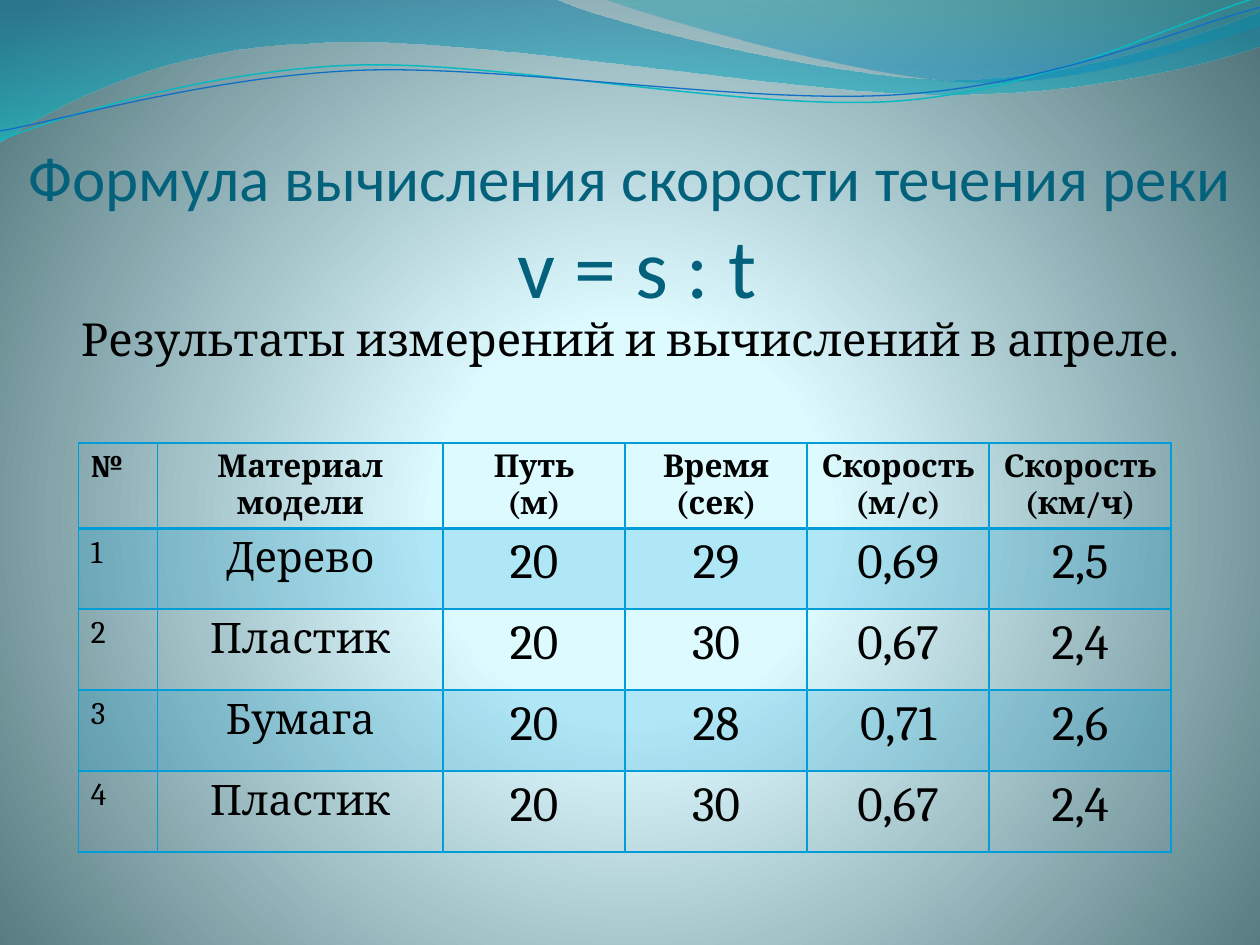
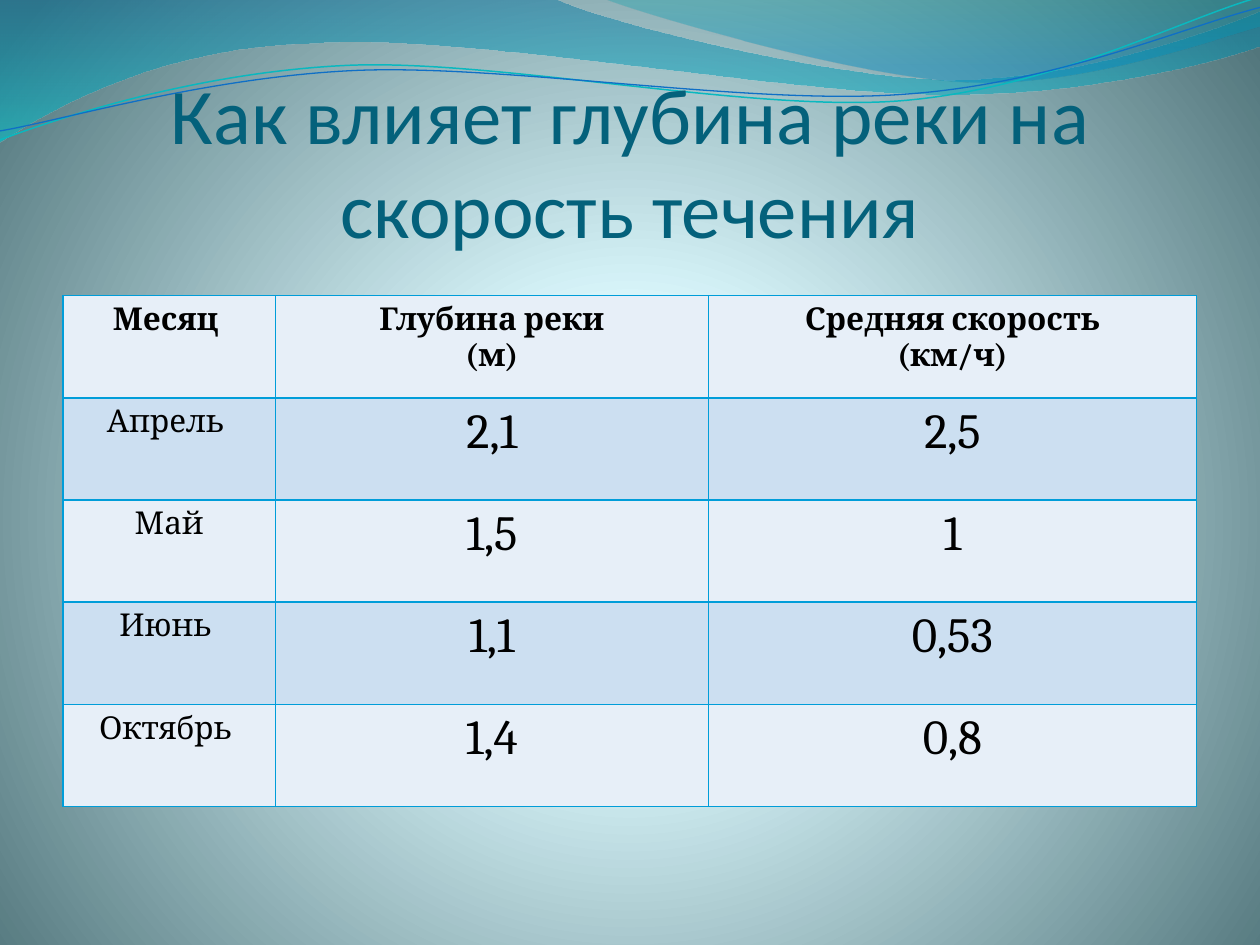
from pptx import Presentation
from pptx.dml.color import RGBColor
from pptx.enum.text import MSO_ANCHOR as Anchor, MSO_AUTO_SIZE as AutoSize, PP_ALIGN as Align
from pptx.oxml import parse_xml
from pptx.oxml.ns import nsdecls, qn
from pptx.util import Cm, Pt

COLORS = {
    "title": "04617B", "text": "000000", "border": "009DD9",
    "glow": "DEFBFF", "pale": "DDFAFF", "edge": "52767C",
    "wave_top": "0074A1", "wave_bottom": "00C6CF",
    "crest_top": "00A1A9", "crest_bottom": "008BBF",
    "teal_line": "0AB8BF", "blue_line": "0F6FC6",
    "light_row": "E7EFF8", "dark_row": "CCDFF1",
}
TITLE_FONT, TEXT_FONT = "Calibri", "Cambria"
LINE_TILT = -2.7

WAVE = [(0, 0), (11.18, -0.03), (12.09, 0.43, 16.87, 1.6, 19.25, 1.6),
        (21.67, 1.6, 24.33, 0.66, 25.4, 0.23), (25.43, 0.91),
        (24.97, 1.12, 22.1, 1.93, 18.95, 1.9), (15.8, 1.9, 9.7, 0.71, 6.53, 0.86),
        (3.28, 0.91, 1.17, 2.11, -0.03, 2.87), (0, 0)]
CREST = [(12.17, -0.03), (12.93, 0.28, 17.32, 1.57, 19.53, 1.65),
         (21.74, 1.75, 24.41, 0.81, 25.4, 0.53), (25.4, 0), (12.17, -0.03)]
TEAL_LINE = [(-0.05, 2.22), (1.19, 1.82, 4.02, 1.04, 7.05, 1.05),
             (10.05, 1.07, 15.02, 2.37, 18.08, 2.29), (21.13, 2.2, 23.86, 0.91, 25.41, 0.55)]
BLUE_LINE = [(-0.04, 2.04), (1.16, 1.9, 4.17, 1.15, 7.2, 1.16),
             (10.25, 1.18, 15.13, 2.25, 18.19, 2.16), (21.22, 2.1, 23.93, 1.06, 25.45, 0.75)]

MEASUREMENTS = [
    ["№", "Материал модели", "Путь\n(м)", "Время\n(сек)", "Скорость\n(м/с)", "Скорость\n(км/ч)"],
    ["1", "Дерево", "20", "29", "0,69", "2,5"],
    ["2", "Пластик", "20", "30", "0,67", "2,4"],
    ["3", "Бумага", "20", "28", "0,71", "2,6"],
    ["4", "Пластик", "20", "30", "0,67", "2,4"],
]
DEPTHS = [
    ["Месяц ", "Глубина реки\n(м)", "Средняя скорость\n(км/ч)"],
    ["Апрель ", "2,1", "2,5"],
    ["Май", "1,5", "1"],
    ["Июнь ", "1,1", "0,53"],
    ["Октябрь ", "1,4", "0,8"],
]


def rgb(name):
    """Return the named colour."""
    return RGBColor.from_string(COLORS[name])


def write_text(paragraph, text, size=18, font=TEXT_FONT, color="text", bold=False, align=Align.CENTER):
    """Add a formatted run to a paragraph."""
    paragraph.alignment = align
    run = paragraph.add_run()
    run.text = text
    run.font.size, run.font.name, run.font.bold = Pt(size), font, bold
    run.font.color.rgb = rgb(color)


def set_gradient(fill, element, stops, shading):
    """Give a fill the stops (percent, colour, opacity) and shading."""
    fill.gradient()
    stop_xml = "".join(
        f'<a:gs pos="{percent * 1000}"><a:srgbClr val="{COLORS[color]}">'
        f'<a:alpha val="{opacity * 1000}"/></a:srgbClr></a:gs>'
        for percent, color, opacity in stops)
    gradient = parse_xml(f'<a:gradFill {nsdecls("a")} rotWithShape="1">'
                         f'<a:gsLst>{stop_xml}</a:gsLst>{shading}</a:gradFill>')
    default = next(element.iter(qn("a:gradFill")))
    default.getparent().replace(default, gradient)


def bend(shape, segments):
    """Replace the straight parts of a freeform with cubic curves where controls are given."""
    straight_parts = list(shape.element.iter(qn("a:lnTo")))
    for part, segment in zip(straight_parts, segments):
        if len(segment) == 6:
            points = "".join(f'<a:pt x="{Cm(x) - shape.left}" y="{Cm(y) - shape.top}"/>'
                             for x, y in zip(segment[::2], segment[1::2]))
            curve = parse_xml(f'<a:cubicBezTo {nsdecls("a")}>{points}</a:cubicBezTo>')
            part.getparent().replace(part, curve)


class RiverDeck:
    """Hold the river style and the current slide."""

    def __init__(self):
        """Start a presentation with its background."""
        self.presentation = Presentation()
        self.presentation.slide_width, self.presentation.slide_height = Cm(25.4), Cm(19.05)
        self.master = self.presentation.slide_master
        self.slide = None
        set_gradient(self.master.background.fill, self.master.element,
                     [(0, "glow", 100), (25, "pale", 100), (100, "edge", 100)],
                     '<a:path path="circle"><a:fillToRect l="10000" t="110000" '
                     'r="10000" b="100000"/></a:path>')

    def add_slide(self, layout):
        """Add a slide, and the shared waves along with the first one."""
        self.slide = self.presentation.slides.add_slide(self.presentation.slide_layouts[layout])
        if len(self.presentation.slides) == 1:
            self.add_band(WAVE, [(0, "wave_top", 45), (100, "wave_bottom", 55)])
            self.add_band(CREST, [(0, "crest_top", 30), (80, "crest_bottom", 45)])
            self.add_curve(TEAL_LINE, "teal_line", 0.85)
            self.add_curve(BLUE_LINE, "blue_line", 0.75)

    def add_outline(self, segments, close):
        """Draw an outline on the master."""
        start, *rest = segments
        builder = self.slide.shapes.build_freeform(*map(Cm, start))
        builder.add_line_segments([tuple(map(Cm, segment[-2:])) for segment in rest], close=close)
        shape = builder.convert_to_shape()
        bend(shape, rest)
        shape.shadow.inherit = False
        self.master.shapes.element.append(shape.element)
        return shape

    def add_band(self, segments, stops):
        """Draw a translucent wave."""
        shape = self.add_outline(segments, True)
        shape.line.fill.background()
        set_gradient(shape.fill, shape.element, stops, '<a:lin ang="5400000" scaled="0"/>')

    def add_curve(self, segments, color, width):
        """Draw a thin wavy line."""
        shape = self.add_outline(segments, False)
        shape.rotation = LINE_TILT
        shape.fill.background()
        shape.line.color.rgb = rgb(color)
        shape.line.width = Pt(width)

    def place(self, shape, box):
        """Move a placeholder to a box in centimetres and return its first paragraph."""
        shape.left, shape.top, shape.width, shape.height = map(Cm, box)
        shape.text_frame.auto_size = AutoSize.NONE
        return shape.text_frame.paragraphs[0]

    def add_title(self, lines, box):
        """Fill the title with lines, each a list of (text, size)."""
        title = self.slide.shapes.title
        paragraph = self.place(title, box)
        frame = title.text_frame
        frame.vertical_anchor = Anchor.BOTTOM
        frame.margin_left = frame.margin_right = frame.margin_bottom = Cm(0)
        for index, line in enumerate(lines):
            if index:
                paragraph.add_line_break()
            for text, size in line:
                write_text(paragraph, text, size=size, font=TITLE_FONT, color="title")

    def add_body(self, text, box):
        """Fill the body with one unbulleted paragraph."""
        paragraph = self.place(self.slide.placeholders[1], box)
        write_text(paragraph, text, size=26)
        paragraph.space_before = Pt(0)
        properties = paragraph._p.get_or_add_pPr()
        properties.set("marL", str(Cm(0.76)))
        properties.set("indent", str(-Cm(0.76)))
        properties.append(parse_xml(f'<a:buNone {nsdecls("a")}/>'))

    def add_table(self, rows, origin, widths, row_height, sizes, fills, rule=1, first_align=Align.CENTER):
        """Draw a table with alternating (colour, opacity) fills."""
        frame = self.slide.shapes.add_table(len(rows), len(widths), *map(Cm, origin),
                                            Cm(sum(widths)), Cm(row_height * len(rows)))
        table = frame.table
        table.first_row = table.horz_banding = False
        for column, width in zip(table.columns, widths):
            column.width = Cm(width)
        for row_index, row in enumerate(rows):
            table.rows[row_index].height = Cm(row_height)
            header = row_index == 0
            for column_index, text in enumerate(row):
                cell = table.cell(row_index, column_index)
                for line_index, line in enumerate(text.split("\n")):
                    text_frame = cell.text_frame
                    paragraph = text_frame.add_paragraph() if line_index else text_frame.paragraphs[0]
                    write_text(paragraph, line, size=18 if header else sizes[column_index],
                               bold=header, align=Align.CENTER if column_index else first_align)
                self.set_borders(cell, top=rule if row_index == 1 else 1, bottom=rule if header else 1)
                self.set_fill(cell, fills[row_index % 2])

    def set_borders(self, cell, top, bottom):
        """Outline a cell."""
        for side, width in {"L": 1, "R": 1, "T": top, "B": bottom}.items():
            cell._tc.get_or_add_tcPr().append(parse_xml(
                f'<a:ln{side} {nsdecls("a")} w="{Pt(width)}"><a:solidFill>'
                f'<a:srgbClr val="{COLORS["border"]}"/></a:solidFill></a:ln{side}>'))

    def set_fill(self, cell, fill):
        """Fill a cell, or leave it clear."""
        if fill is None:
            cell.fill.background()
            return
        color, opacity = fill
        cell.fill.solid()
        cell.fill.fore_color.rgb = rgb(color)
        if opacity < 100:
            color_element = cell._tc.tcPr.find(qn("a:solidFill")).find(qn("a:srgbClr"))
            color_element.append(parse_xml(f'<a:alpha {nsdecls("a")} val="{opacity * 1000}"/>'))


def main():
    """Build both slides and save them."""
    deck = RiverDeck()

    deck.add_slide(1)
    deck.add_title([[("Формула вычисления скорости течения реки", 36)], [(" ", 36), ("v = s : t", 48)]],
                   (0.4, 0.58, 24.6, 5.77))
    deck.add_body("Результаты измерений и вычислений в апреле.", (1.27, 6.15, 22.86, 11.4))
    deck.add_table(MEASUREMENTS, (1.58, 8.93), [1.6, 5.75] + [3.67] * 4, 1.63,
                   sizes=[18, 24] + [28] * 4, fills=[None, ("border", 20)],
                   rule=2, first_align=Align.LEFT)

    deck.add_slide(5)
    deck.add_title([[("Как влияет глубина реки на скорость течения", 45)]], (1.27, 1.95, 22.86, 3.18))
    deck.add_table(DEPTHS, (1.27, 5.96), [4.28, 8.73, 9.84], 2.06,
                   sizes=[18, 28, 28], fills=[("light_row", 100), ("dark_row", 100)])

    deck.presentation.save("out.pptx")


if __name__ == "__main__":
    main()
